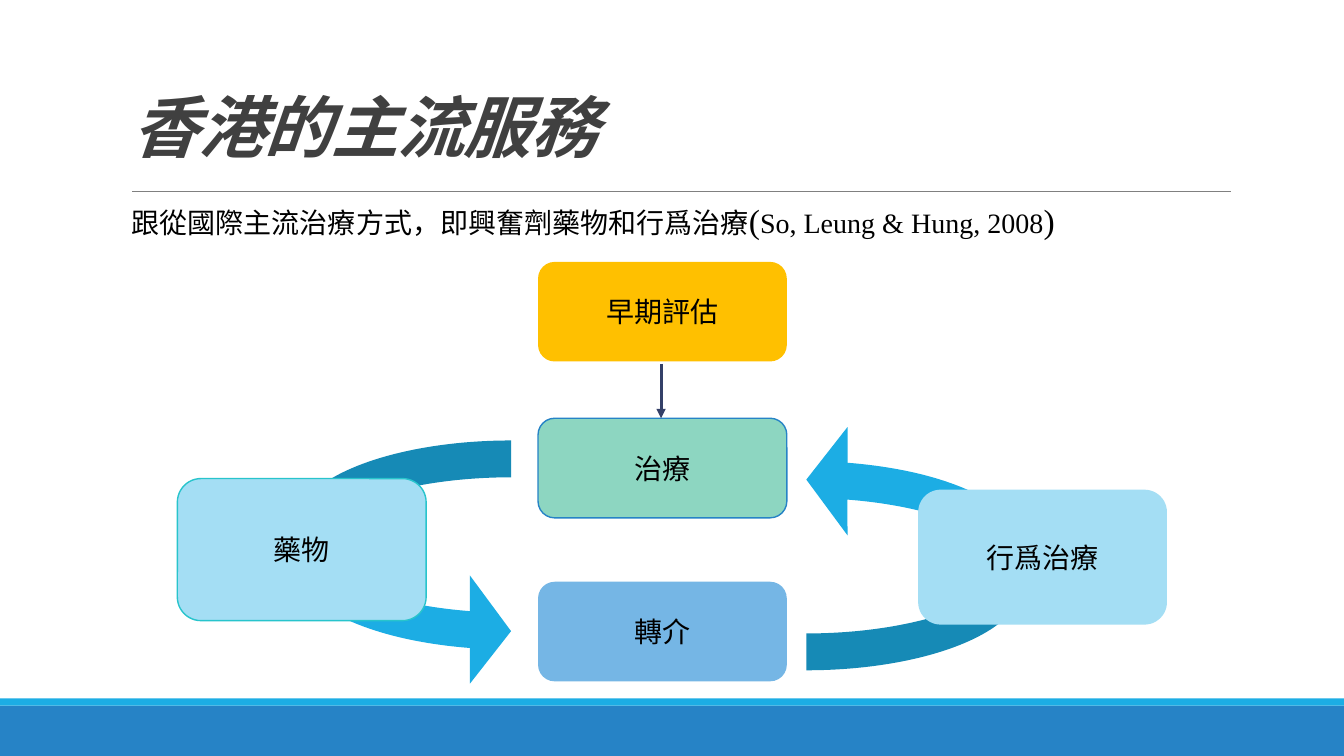
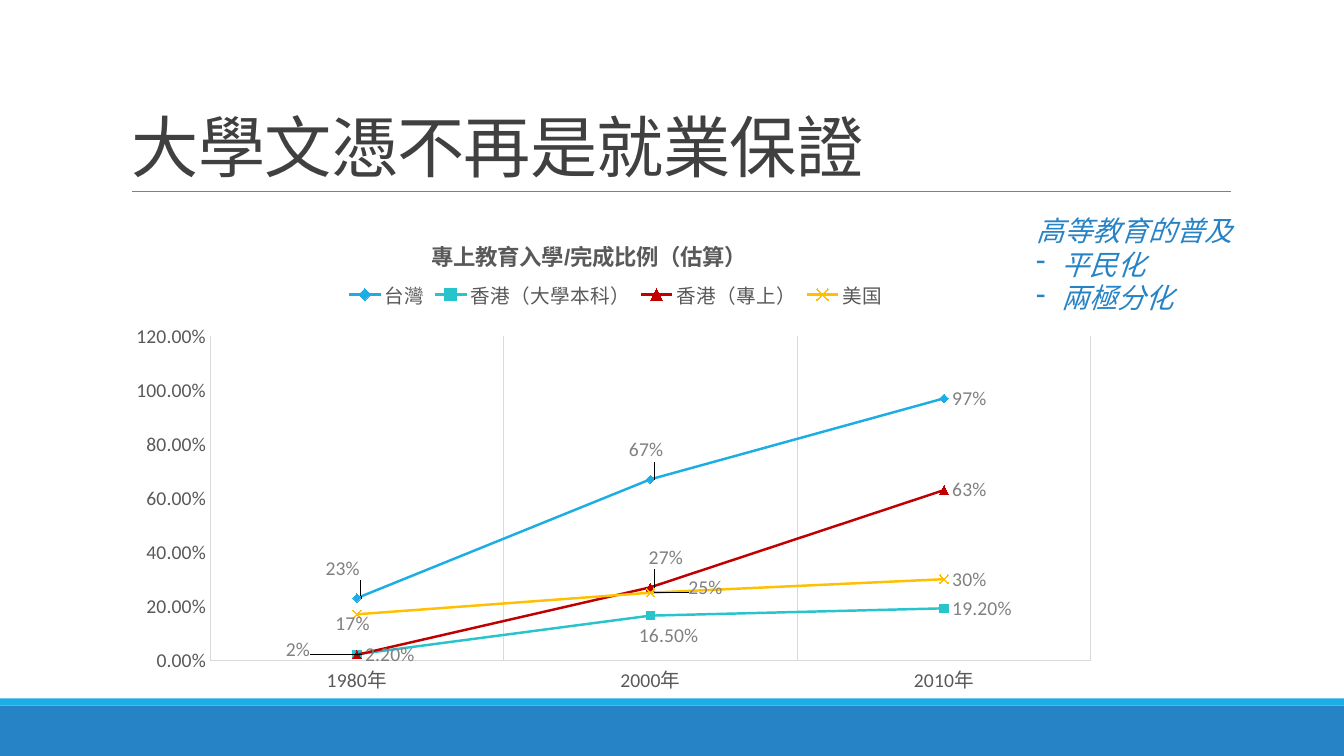
"""Build two slides: mainstream services in Hong Kong and the spread of higher education."""
from lxml import etree
from pptx import Presentation
from pptx import util as u
from pptx.chart import data as chart_data
from pptx.dml.color import RGBColor
from pptx.enum import chart as ch, shapes, text
from pptx.oxml import ns

Cm, Pt = u.Cm, u.Pt
BLUE = RGBColor(0x26, 0x83, 0xC6)
CYAN = RGBColor(0x1C, 0xAD, 0xE4)
TEAL = RGBColor(0x28, 0xC4, 0xCC)
GOLD = RGBColor(0xFF, 0xC0, 0x00)
RED = RGBColor(0xC0, 0x00, 0x00)
MINT = RGBColor(0x8D, 0xD6, 0xC1)
PALE_BLUE = RGBColor(0xA4, 0xDE, 0xF4)
MID_BLUE = RGBColor(0x75, 0xB6, 0xE5)
NAVY = RGBColor(0x34, 0x40, 0x68)
BLACK = RGBColor(0x00, 0x00, 0x00)
DARK = RGBColor(0x40, 0x40, 0x40)
SLATE = RGBColor(0x59, 0x59, 0x59)
GREY = RGBColor(0x80, 0x80, 0x80)
LIGHT = RGBColor(0xD9, 0xD9, 0xD9)

SERIF = {"name": "Times New Roman", "size": Pt(20)}
CHART_FONT = {"name": "Calibri", "size": Pt(14)}
NOTE_FONT = {"name": "Arial", "size": Pt(20), "italic": True}


def dress(font, colour, values):
    for name, value in values.items():
        setattr(font, name, value)
    font.color.rgb = colour


def place(element, index, **fractions):
    for old in element.findall(ns.qn("c:layout")):
        element.remove(old)
    layout = etree.Element(ns.qn("c:layout"))
    manual = etree.SubElement(layout, ns.qn("c:manualLayout"))
    for name, value in fractions.items():
        etree.SubElement(manual, ns.qn(f"c:{name}")).set("val", str(value))
    element.insert(index, layout)


deck = Presentation()
deck.slide_width, deck.slide_height = Cm(33.87), Cm(19.05)

TITLES = [
    ("香港的主流服務", 1.8, 3.05, text.MSO_ANCHOR.MIDDLE,
     {"name": "Times New Roman", "bold": True, "italic": True}),
    ("大學文憑不再是就業保證", 0.79, 4.04, text.MSO_ANCHOR.BOTTOM, {"name": "Arial"}),
]
slides = []
for wording, top, height, anchor, face in TITLES:
    slide = deck.slides.add_slide(deck.slide_layouts[6])
    slides.append(slide)
    for band_top, band_height, colour in [(17.78, 1.27, BLUE), (17.6, 0.18, CYAN)]:
        band = slide.shapes.add_shape(shapes.MSO_SHAPE.RECTANGLE, 0, Cm(band_top),
                                      deck.slide_width, Cm(band_height))
        band.shadow.inherit = False
        band.fill.solid()
        band.fill.fore_color.rgb = colour
        band.line.fill.background()
    rule = slide.shapes.add_connector(shapes.MSO_CONNECTOR.STRAIGHT,
                                      Cm(3.33), Cm(4.83), Cm(31.01), Cm(4.83))
    rule.line.color.rgb = GREY
    rule.line.width = Pt(0.5)
    etree.SubElement(rule._element.spPr, ns.qn("a:effectLst"))
    title = slide.shapes.add_textbox(Cm(3.07), Cm(top), Cm(28), Cm(height)).text_frame
    title.word_wrap = True
    title.vertical_anchor = anchor
    title.paragraphs[0].line_spacing = 0.85
    heading = title.paragraphs[0].add_run()
    heading.text = wording
    dress(heading.font, DARK, {"size": Pt(48), **face})
    heading.font._element.set("spc", "-50")

services, education = slides

for left, top, rotation in [(20.32, 10.72, 180), (7.42, 11.1, 0)]:
    cycle = services.shapes.add_shape(shapes.MSO_SHAPE.CURVED_RIGHT_ARROW,
                                      Cm(left), Cm(top), Cm(5.46), Cm(6.17))
    cycle.rotation = rotation
    for index, value in enumerate([0.17, 0.5, 0.19]):
        cycle.adjustments[index] = value
    cycle.shadow.inherit = False
    cycle.fill.solid()
    cycle.fill.fore_color.rgb = CYAN
    cycle.line.fill.background()

STEPS = [
    ("早期評估", 13.56, 6.6, 2.51, GOLD, None),
    ("治療", 13.56, 10.54, 2.51, MINT, BLUE),
    ("藥物", 4.47, 12.06, 3.58, PALE_BLUE, TEAL),
    ("行爲治療", 23.14, 12.34, 3.4, PALE_BLUE, None),
    ("轉介", 13.56, 14.66, 2.51, MID_BLUE, None),
]
for wording, left, top, height, colour, outline in STEPS:
    step = services.shapes.add_shape(shapes.MSO_SHAPE.ROUNDED_RECTANGLE,
                                     Cm(left), Cm(top), Cm(6.27), Cm(height))
    step.shadow.inherit = False
    step.fill.solid()
    step.fill.fore_color.rgb = colour
    if outline is None:
        step.line.fill.background()
    else:
        step.line.color.rgb = outline
        step.line.width = Pt(1)
    step.text_frame.vertical_anchor = text.MSO_ANCHOR.MIDDLE
    label = step.text_frame.paragraphs[0]
    label.alignment = text.PP_ALIGN.CENTER
    run = label.add_run()
    run.text = wording
    dress(run.font, BLACK, SERIF)

arrow = services.shapes.add_connector(shapes.MSO_CONNECTOR.STRAIGHT,
                                      Cm(16.66), Cm(9.17), Cm(16.66), Cm(10.54))
arrow.line.color.rgb = NAVY
arrow.line.width = Pt(2.25)
etree.SubElement(arrow.line._get_or_add_ln(), ns.qn("a:tailEnd")).set("type", "triangle")
etree.SubElement(arrow._element.spPr, ns.qn("a:effectLst"))

summary = services.shapes.add_textbox(Cm(3.07), Cm(4.94), Cm(28.88), Cm(1.2)).text_frame
summary.word_wrap = True
summary.vertical_anchor = text.MSO_ANCHOR.MIDDLE
for wording, size in [("跟從國際主流治療方式，即興奮劑藥物和行爲治療", 20), ("(", 24),
                      ("So, Leung & Hung, 2008", 20), (")", 24)]:
    run = summary.paragraphs[0].add_run()
    run.text = wording
    dress(run.font, BLACK, {**SERIF, "size": Pt(size)})

MARKER = ch.XL_MARKER_STYLE
RATES = [
    ("台灣", (0.23, 0.67, 0.97), "0%", CYAN, MARKER.DIAMOND,
     {0: (-0.04, -0.06), 1: (-0.03, -0.06)}),
    ("香港（大學本科）", (0.022, 0.165, 0.192), "0.00%", TEAL, MARKER.SQUARE,
     {1: (-0.02, 0.04)}),
    ("香港（專上）", (0.02, 0.27, 0.63), "0%", RED, MARKER.TRIANGLE,
     {0: (-0.08, -0.01), 1: (-0.01, -0.06)}),
    ("美国", (0.17, 0.25, 0.3), "0%", GOLD, MARKER.X,
     {0: (-0.03, 0.02), 1: (0.03, -0.01)}),
]
rates = chart_data.CategoryChartData()
rates.categories = ["1980年", "2000年", "2010年"]
for name, values, number_format, *_ in RATES:
    rates.add_series(name, values, number_format)
chart = education.shapes.add_chart(ch.XL_CHART_TYPE.LINE_MARKERS, Cm(3.05), Cm(5.26),
                                   Cm(24.94), Cm(12.37), rates).chart
dress(chart.font, SLATE, CHART_FONT)

chart.has_title = True
caption = chart.chart_title.text_frame.paragraphs[0].add_run()
caption.text = "專上教育入學/完成比例（估算）"
dress(caption.font, SLATE, {"name": "Arial", "size": Pt(16), "bold": True})
place(chart.chart_title._element, 1, xMode="edge", yMode="edge", x=0.31, y=0.05)

chart.has_legend = True
chart.legend.position = ch.XL_LEGEND_POSITION.TOP
chart.legend.include_in_layout = False
dress(chart.legend.font, SLATE, CHART_FONT)
place(chart.legend._element, 1, xMode="edge", yMode="edge", x=0.22, y=0.14, w=0.56, h=0.07)
place(chart._chartSpace.chart.plotArea, 0, layoutTarget="inner", xMode="edge", yMode="edge",
      x=0.09, y=0.26, w=0.89, h=0.66)

years, shares = chart.category_axis, chart.value_axis
years.has_major_gridlines, shares.has_major_gridlines = True, False
shares.minimum_scale, shares.maximum_scale, shares.major_unit = 0, 1.2, 0.2
shares.tick_labels.number_format = "0.00%"
shares.tick_labels.number_format_is_linked = False
for axis in (years, shares):
    axis.major_tick_mark = axis.minor_tick_mark = ch.XL_TICK_MARK.NONE
    dress(axis.tick_labels.font, SLATE, CHART_FONT)
for line in (years.format.line, shares.format.line, years.major_gridlines.format.line):
    line.color.rgb = LIGHT
    line.width = Pt(0.75)

chart.plots[0].vary_by_categories = False
for series, (_, _, number_format, colour, marker, shifts) in zip(chart.plots[0].series, RATES):
    series.smooth = False
    series.format.line.color.rgb = colour
    series.format.line.width = Pt(1.75)
    series.marker.style = marker
    series.marker.size = 6
    series.marker.format.line.color.rgb = colour
    if marker == MARKER.X:
        series.marker.format.fill.background()
    else:
        series.marker.format.fill.solid()
        series.marker.format.fill.fore_color.rgb = colour
    labels = series.data_labels
    for name, value in {"show_value": True, "number_format": number_format,
                        "number_format_is_linked": False,
                        "position": ch.XL_LABEL_POSITION.RIGHT}.items():
        setattr(labels, name, value)
    dress(labels.font, GREY, CHART_FONT)
    for index, (x, y) in shifts.items():
        share = series.points[index].data_label
        share.position = ch.XL_LABEL_POSITION.RIGHT
        dress(share.font, GREY, CHART_FONT)
        place(share._get_or_add_dLbl(), 1, x=x, y=y)

remarks = education.shapes.add_textbox(Cm(25.86), Cm(5.26), Cm(5.87), Cm(2.82)).text_frame
remarks.word_wrap = True
for index, wording in enumerate(["高等教育的普及", "平民化", "兩極分化"]):
    remark = remarks.add_paragraph() if index else remarks.paragraphs[0]
    run = remark.add_run()
    run.text = wording
    dress(run.font, BLUE, NOTE_FONT)
    if index:
        properties = remark._p.get_or_add_pPr()
        properties.set("marL", str(Cm(0.64)))
        properties.set("indent", str(-Cm(0.64)))
        etree.SubElement(properties, ns.qn("a:buChar")).set("char", "-")

deck.save("out.pptx")
